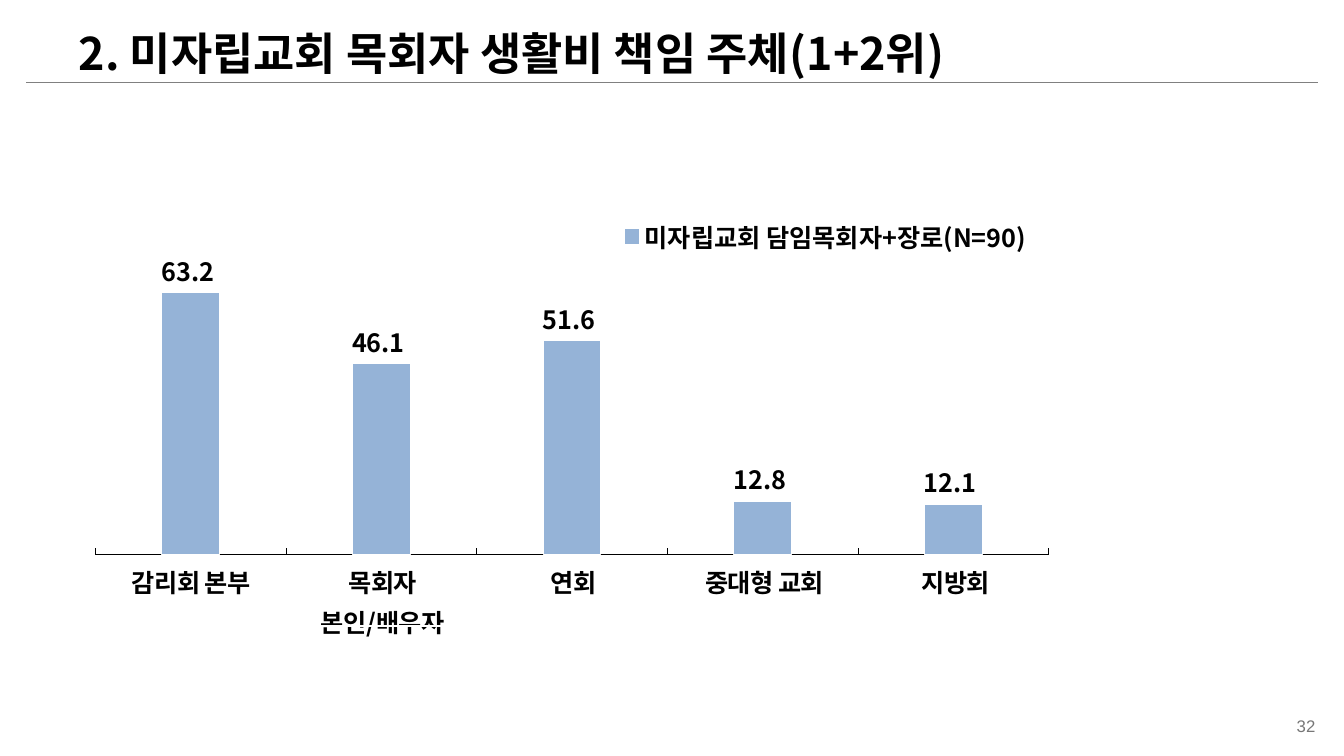
from lxml.etree import SubElement
from pptx import Presentation
from pptx.chart.data import CategoryChartData
from pptx.dml.color import RGBColor
from pptx.enum.chart import (XL_CHART_TYPE, XL_LABEL_POSITION, XL_LEGEND_POSITION,
                             XL_TICK_LABEL_POSITION, XL_TICK_MARK)
from pptx.enum.shapes import MSO_CONNECTOR
from pptx.enum.text import MSO_ANCHOR, MSO_AUTO_SIZE, PP_ALIGN
from pptx.oxml import parse_xml
from pptx.oxml.ns import nsdecls, qn
from pptx.util import Pt

COLORS = {"text": "000000", "number": "777777", "rule": "808080",
          "bar": "95B3D7", "bar_edge": "FFFFFF"}
KOREAN = "Noto Sans CJK KR"
LABEL = {"size": Pt(18), "bold": True, "name": KOREAN}
SHARES = {"감리회 본부": 63.2, "목회자 본인/배우자": 46.1, "연회": 51.6,
          "중대형 교회": 12.8, "지방회": 12.1}


def rgb(key):
    return RGBColor.from_string(COLORS[key])


def apply(target, values):
    for name, value in values.items():
        setattr(target, name, value)


def style_font(font, values, color="text"):
    """Format a font, using the same typeface for Latin and Korean letters."""
    font.color.rgb = rgb(color)
    apply(font, values)
    SubElement(font._rPr, qn("a:ea")).set("typeface", values["name"])


def pin_layout(parent, index, box, inner=False):
    """Fix a chart part at box, given as fractions of the chart."""
    for old in parent.findall(qn("c:layout")):
        parent.remove(old)
    target = '<c:layoutTarget val="inner"/>' if inner else ""
    modes = "".join(f'<c:{a}Mode val="edge"/>' for a in "xy")
    sizes = "".join(f'<c:{a} val="{v}"/>' for a, v in zip("xywh", box))
    parent.insert(index, parse_xml(
        f'<c:layout {nsdecls("c")}><c:manualLayout>{target}{modes}{sizes}'
        "</c:manualLayout></c:layout>"))


def add_title(s, x, y, w, h):
    title = s.shapes.title
    apply(title, {"left": Pt(x), "top": Pt(y), "width": Pt(w), "height": Pt(h)})
    tf = title.text_frame
    apply(tf, {"word_wrap": False, "auto_size": MSO_AUTO_SIZE.NONE,
               "vertical_anchor": MSO_ANCHOR.TOP})
    p = tf.paragraphs[0]
    p.alignment = PP_ALIGN.LEFT
    r = p.add_run()
    r.text = "2. 미자립교회 목회자 생활비 책임 주체(1+2위)"
    style_font(r.font, {"size": Pt(32), "bold": True, "name": KOREAN})


def add_rule(s, x, y, w):
    rule = s.shapes.add_connector(MSO_CONNECTOR.STRAIGHT, Pt(x), Pt(y), Pt(x + w), Pt(y))
    rule.line.color.rgb = rgb("rule")
    rule.line.width = Pt(1)
    SubElement(rule._element.spPr, qn("a:effectLst"))


def add_page_number(s, x, y, w, h):
    tf = s.shapes.add_textbox(Pt(x), Pt(y), Pt(w), Pt(h)).text_frame
    apply(tf, {"word_wrap": True, "vertical_anchor": MSO_ANCHOR.BOTTOM,
               "margin_left": Pt(1.5), "margin_right": Pt(5)})
    p = tf.paragraphs[0]
    p.alignment = PP_ALIGN.RIGHT
    r = p.add_run()
    r.text = "32"
    style_font(r.font, {"size": Pt(12), "name": "Arial"}, "number")


def add_share_chart(s, x, y, w, h):
    data = CategoryChartData(number_format="0.0")
    data.categories = [str(i + 1) for i in range(len(SHARES))]
    data.add_series("미자립교회 담임목회자+장로(N=90)", list(SHARES.values()))
    chart = s.shapes.add_chart(XL_CHART_TYPE.COLUMN_CLUSTERED,
                               Pt(x), Pt(y), Pt(w), Pt(h), data).chart
    style_font(chart.font, {"size": Pt(9), "bold": True, "name": "Arial"})
    chart.has_title = False
    pin_layout(chart._chartSpace.chart.plotArea, 0, (0.02, 0.09, 0.96, 0.88), inner=True)

    chart.has_legend = True
    legend = chart.legend
    apply(legend, {"position": XL_LEGEND_POSITION.RIGHT, "include_in_layout": False})
    pin_layout(legend._element, 1, (0.53, 0.06, 0.45, 0.13))
    style_font(legend.font, LABEL)

    axes = ((chart.category_axis, XL_TICK_MARK.INSIDE),
            (chart.value_axis, XL_TICK_MARK.OUTSIDE))
    for axis, tick in axes:
        apply(axis, {"tick_label_position": XL_TICK_LABEL_POSITION.NONE,
                     "major_tick_mark": tick, "minor_tick_mark": XL_TICK_MARK.NONE,
                     "has_major_gridlines": False})
    line = chart.category_axis.format.line
    line.color.rgb = rgb("text")
    line.width = Pt(0.25)
    apply(chart.value_axis, {"minimum_scale": 0, "maximum_scale": 80})
    chart.value_axis.format.line.fill.background()

    plot = chart.plots[0]
    apply(plot, {"gap_width": 230, "overlap": -5, "vary_by_categories": False})
    bars = plot.series[0]
    bars.format.fill.solid()
    bars.format.fill.fore_color.rgb = rgb("bar")
    bars.format.line.color.rgb = rgb("bar_edge")
    bars.format.line.width = Pt(0.75)
    labels = bars.data_labels
    apply(labels, {"show_value": True, "position": XL_LABEL_POSITION.OUTSIDE_END,
                   "number_format": "0.0_ ", "number_format_is_linked": False})
    style_font(labels.font, LABEL)


def add_category_table(s, x, y, w, h):
    """Category names, one column under each bar."""
    table = s.shapes.add_table(1, len(SHARES), Pt(x), Pt(y), Pt(w), Pt(h)).table
    apply(table, {"first_row": False, "horz_banding": False})
    for i, name in enumerate(SHARES):
        table.columns[i].width = Pt(w / len(SHARES))
        cell = table.cell(0, i)
        cell.fill.background()
        apply(cell, {"margin_left": Pt(0.7), "margin_right": Pt(0.7),
                     "margin_top": Pt(0.7), "margin_bottom": 0,
                     "vertical_anchor": MSO_ANCHOR.TOP})
        p = cell.text_frame.paragraphs[0]
        apply(p, {"alignment": PP_ALIGN.CENTER, "line_spacing": 1.1})
        r = p.add_run()
        r.text = name
        style_font(r.font, LABEL)
        r.font._rPr.set("spc", "-40")


def main():
    prs = Presentation()
    apply(prs, {"slide_width": Pt(960), "slide_height": Pt(540)})
    s = prs.slides.add_slide(prs.slide_layouts[5])
    add_page_number(s, 896.4, 507.6, 48.2, 21.6)
    add_rule(s, 18.7, 59, 923)
    add_share_chart(s, 54, 135.4, 709.2, 268.6)
    add_category_table(s, 68.4, 398.9, 682.6, 33.8)
    add_title(s, 49, 14.4, 699, 46)
    prs.save("out.pptx")


if __name__ == "__main__":
    main()
